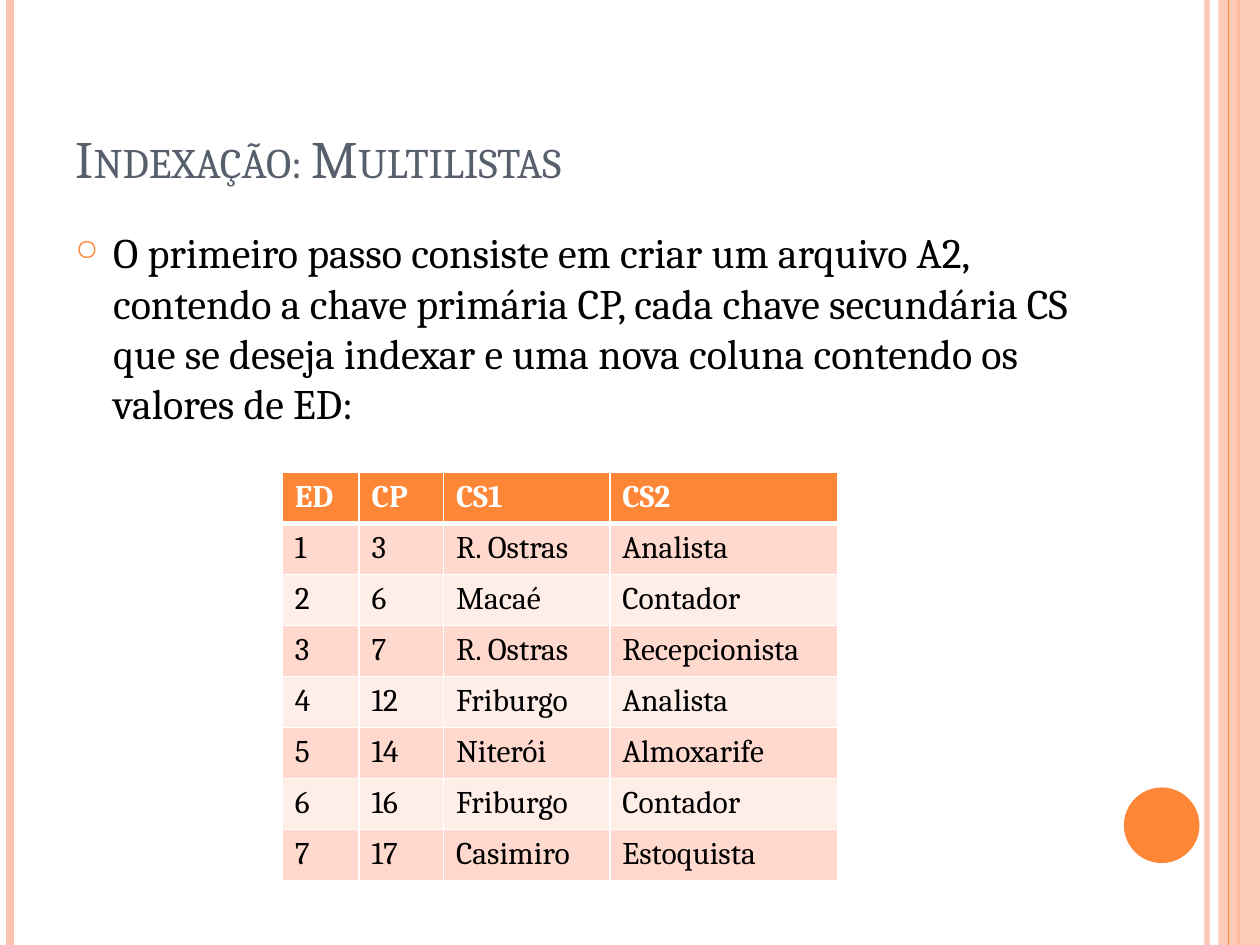
from pptx import Presentation
from pptx.dml.color import RGBColor
from pptx.enum.shapes import MSO_CONNECTOR, MSO_SHAPE
from pptx.enum.text import MSO_ANCHOR, MSO_AUTO_SIZE, PP_ALIGN
from pptx.oxml.ns import qn
from pptx.util import Inches, Pt
from lxml import etree

STRAIGHT = MSO_CONNECTOR.STRAIGHT
RECTANGLE, OVAL = MSO_SHAPE.RECTANGLE, MSO_SHAPE.OVAL
BOTTOM, LEFT = MSO_ANCHOR.BOTTOM, PP_ALIGN.LEFT
FIXED = MSO_AUTO_SIZE.NONE

WHITE = RGBColor(0xFF, 0xFF, 0xFF)
BLACK = RGBColor(0x00, 0x00, 0x00)
SLATE = RGBColor(0x57, 0x5F, 0x6D)
ORANGE = RGBColor(0xFE, 0x86, 0x37)
PEACH = RGBColor(0xFE, 0xC3, 0xAE)
BAND_DARK = RGBColor(0xFF, 0xD9, 0xCE)
BAND_LIGHT = RGBColor(0xFF, 0xED, 0xE8)

FONT = "Cambria"
COLUMNS, ROWS = 100, 75
TITLE_ONLY = 5

TITLE = "Indexação: Multilistas"
BODY = ("O primeiro passo consiste em criar um arquivo A2, contendo a chave "
        "primária CP, cada chave secundária CS que se deseja indexar e uma "
        "nova coluna contendo os valores de ED:")
RECORDS = [
    ("ED", "CP", "CS1", "CS2"),
    ("1", "3", "R. Ostras", "Analista"),
    ("2", "6", "Macaé", "Contador"),
    ("3", "7", "R. Ostras", "Recepcionista"),
    ("4", "12", "Friburgo", "Analista"),
    ("5", "14", "Niterói", "Almoxarife"),
    ("6", "16", "Friburgo", "Contador"),
    ("7", "17", "Casimiro", "Estoquista"),
]
FIELD_WIDTHS = [6.1, 6.7, 13.2, 18.1]
RECORD_HEIGHT = 4.05


def add_element(parent, tag, **attributes):
    return etree.SubElement(parent, qn(tag), attributes)


class SlideBuilder:
    def __init__(self, deck):
        self.column = deck.slide_width / COLUMNS
        self.row = deck.slide_height / ROWS
        self.page = deck.slides.add_slide(deck.slide_layouts[TITLE_ONLY])
        self.page.background.fill.solid()
        self.page.background.fill.fore_color.rgb = WHITE

    def place(self, left, top, width, height):
        return (int(left * self.column), int(top * self.row),
                int(width * self.column), int(height * self.row))

    def add_span(self, para, text, size, color, bold=False):
        span = para.add_run()
        span.text = text
        span.font.name = FONT
        span.font.size = Pt(size)
        span.font.bold = bold
        span.font.color.rgb = color
        return span

    def set_opacity(self, shape, percent):
        for color in shape._element.spPr.iter(qn("a:srgbClr")):
            add_element(color, "a:alpha", val=str(percent * 1000))

    def stripe(self, x, color, weight, opacity=100):
        left, top, _, bottom = self.place(x, 0, 0, ROWS)
        line = self.page.shapes.add_connector(STRAIGHT, left, top, left, bottom)
        line.line.color.rgb = color
        line.line.width = Pt(weight)
        if opacity < 100:
            self.set_opacity(line, opacity)
        add_element(line._element.spPr, "a:effectLst")

    def shape(self, kind, area, color, opacity=100):
        shape = self.page.shapes.add_shape(kind, *self.place(*area))
        shape.shadow.inherit = False
        shape.fill.solid()
        shape.fill.fore_color.rgb = color
        shape.line.fill.background()
        if opacity < 100:
            self.set_opacity(shape, opacity)

    def title(self, area, text):
        box = self.page.shapes.title
        box.left, box.top, box.width, box.height = self.place(*area)
        frame = box.text_frame
        frame.word_wrap = True
        frame.auto_size = FIXED
        frame.vertical_anchor = BOTTOM
        para = frame.paragraphs[0]
        para.alignment = LEFT
        span = self.add_span(para, text, 30, SLATE)
        span.font._element.set("cap", "small")

    def bullet(self, area, text):
        box = self.page.shapes.add_textbox(*self.place(*area))
        box.text_frame.word_wrap = True
        para = box.text_frame.paragraphs[0]
        properties = para._p.get_or_add_pPr()
        indent = Inches(0.3)
        properties.set("marL", str(indent))
        properties.set("indent", str(-indent))
        color = add_element(properties, "a:buClr")
        add_element(color, "a:srgbClr", val=str(ORANGE))
        add_element(properties, "a:buSzPct", val="70000")
        add_element(properties, "a:buChar", char="○")
        self.add_span(para, text, 24, BLACK)

    def borders(self, cell, top, bottom):
        properties = cell._tc.get_or_add_tcPr()
        for side, weight in (("L", 1), ("R", 1), ("T", top), ("B", bottom)):
            line = add_element(properties, f"a:ln{side}", w=str(Pt(weight)))
            fill = add_element(line, "a:solidFill")
            add_element(fill, "a:srgbClr", val=str(WHITE))

    def table(self, left, top, widths, height, records):
        area = self.place(left, top, sum(widths), height * len(records))
        table = self.page.shapes.add_table(len(records), len(widths), *area).table
        for column, width in zip(table.columns, widths):
            column.width = int(width * self.column)
        for index, record in enumerate(records):
            table.rows[index].height = int(height * self.row)
            header = index == 0
            band = ORANGE if header else BAND_DARK if index % 2 else BAND_LIGHT
            for field, text in enumerate(record):
                cell = table.cell(index, field)
                self.borders(cell, 3 if index == 1 else 1, 3 if header else 1)
                cell.fill.solid()
                cell.fill.fore_color.rgb = band
                self.add_span(cell.text_frame.paragraphs[0], text, 18,
                              WHITE if header else BLACK, header)


def main():
    deck = Presentation()
    deck.slide_width, deck.slide_height = Inches(10), Inches(7.5)
    slide = SlideBuilder(deck)
    slide.stripe(95.8, PEACH, 3, 93)
    slide.stripe(0.8, PEACH, 4.5)
    slide.stripe(98.3, ORANGE, 1.5)
    slide.shape(RECTANGLE, (96.7, 0, 3.3, ROWS), PEACH, 87)
    slide.stripe(97.5, ORANGE, 0.75)
    slide.shape(OVAL, (89.2, 62.5, 6, 6), ORANGE)
    slide.title((5, 3, 81.7, 12.5), TITLE)
    slide.bullet((5, 17.5, 81.7, 53.3), BODY)
    slide.table(22.4, 37.5, FIELD_WIDTHS, RECORD_HEIGHT, RECORDS)
    deck.save("out.pptx")


if __name__ == "__main__":
    main()
